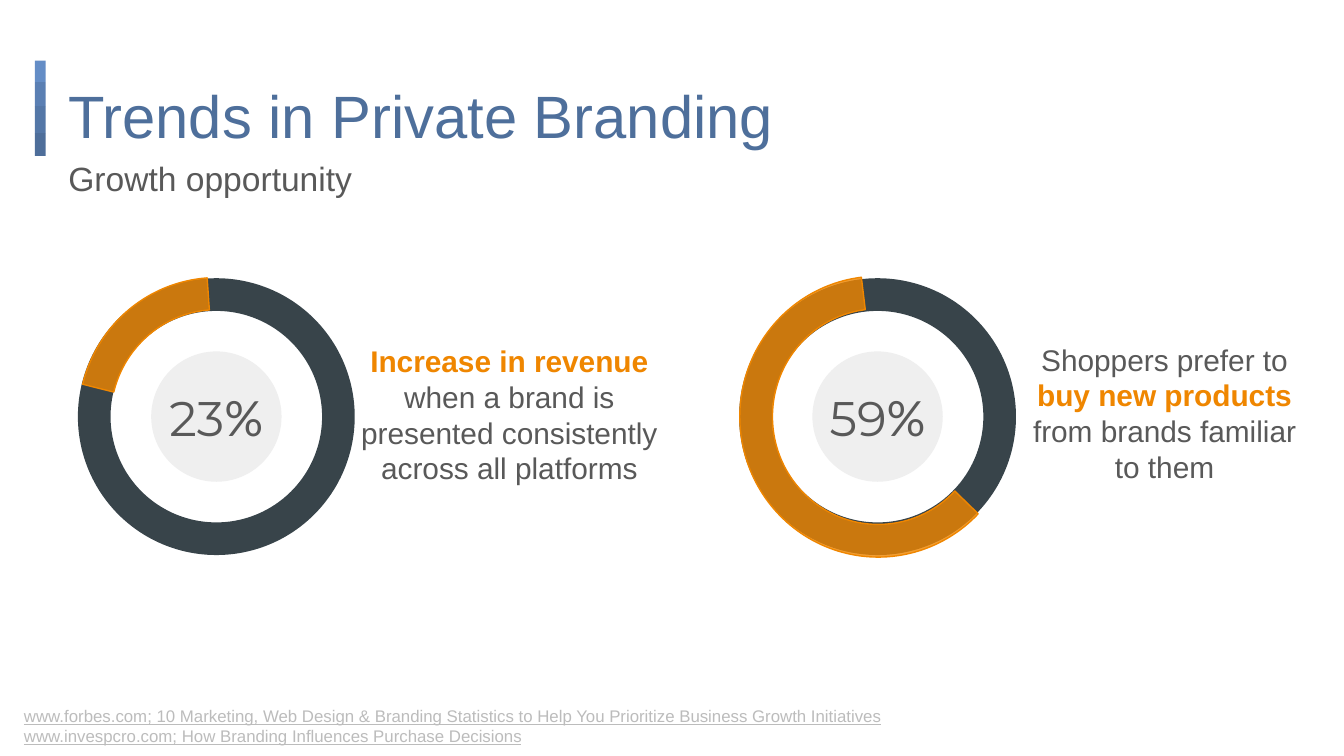
from dataclasses import dataclass

from lxml import etree
from pptx import Presentation
from pptx import util as u
from pptx.dml.color import RGBColor
from pptx.enum import shapes, text
from pptx.oxml import ns


@dataclass(frozen=True)
class Theme:
    title: str = "4E6F9B"
    body: str = "595959"
    accent: str = "EF8600"
    ring: str = "38444A"
    disc: str = "EFEFEF"
    source: str = "BCBCBC"
    bars: tuple = ("648DC6", "5A7FB3", "5477A7", "4E6E9A")
    font: str = "Arial"
    digits: str = "Montserrat"
    symbol: str = "Lato"
    big: int = 32
    figure: int = 26
    sub: int = 18
    label: int = 16
    small: int = 9


T = Theme()
KIND = shapes.MSO_SHAPE


def paint(fill, color):
    fill.solid()
    fill.fore_color.rgb = RGBColor.from_string(color)


def add_text(slide, box, paras, size, color=T.body, font=T.font, inset=(0.1, 0.1),
             align=None, anchor=text.MSO_ANCHOR.TOP, line=None, after=None,
             under=None, grow=False):
    shape = slide.shapes.add_textbox(*map(u.Inches, box))
    frame = shape.text_frame
    frame.word_wrap = True
    frame.auto_size = (text.MSO_AUTO_SIZE.SHAPE_TO_FIT_TEXT if grow
                       else text.MSO_AUTO_SIZE.NONE)
    frame.vertical_anchor = anchor
    frame.margin_left = frame.margin_right = u.Inches(inset[0])
    frame.margin_top = frame.margin_bottom = u.Inches(inset[1])
    for i, runs in enumerate(paras):
        para = frame.add_paragraph() if i else frame.paragraphs[0]
        para.alignment = align
        para.line_spacing = line
        if after is not None:
            para.space_after = u.Pt(after)
        for words, style in runs:
            run = para.add_run()
            run.text = words
            run.font.size = u.Pt(size)
            run.font.name = style.get("font", font)
            run.font.bold = style.get("bold")
            run.font.underline = under
            run.font.color.rgb = RGBColor.from_string(style.get("color", color))


def add_form(slide, kind, box, color, turn=0, adjust=(), alpha=None, edge=None):
    shape = slide.shapes.add_shape(kind, *map(u.Inches, box))
    shape.shadow.inherit = False
    shape.rotation = turn
    for i, value in enumerate(adjust):
        shape.adjustments[i] = value
    paint(shape.fill, color)
    if alpha is not None:
        tint = shape.fill._xPr.find(".//" + ns.qn("a:srgbClr"))
        etree.SubElement(tint, ns.qn("a:alpha")).set("val", str(alpha * 1000))
    if edge:
        paint(shape.line.fill, edge)
        shape.line.width = u.Pt(0.75)
    else:
        shape.line.fill.background()


def add_head(slide, left, top, width):
    y = top - 0.04
    for color, height in zip(T.bars, (0.16, 0.18, 0.2, 0.17)):
        mid = y + height / 2
        box = (left - 0.11 - height / 2, mid - 0.04, height, 0.08)
        add_form(slide, KIND.RECTANGLE, box, color, 270)
        y += height
    add_text(slide, (left, top, width, 0.63),
             [[("Trends in Private Branding", {})]], T.big, color=T.title)
    add_text(slide, (left, top + 0.54, width, 0.43),
             [[("Growth opportunity", {})]], T.sub, line=1.15, after=16)


def add_gauge(slide, left, top, size, number, arc, drop, note, place, inset):
    disc = 0.97
    gap = (size - disc) / 2
    add_form(slide, KIND.OVAL, (left + gap, top + gap, disc, disc), T.disc)
    add_form(slide, KIND.DONUT, (left, top, size, size), T.ring, 270, (0.118,))
    start, end, thick = arc
    unit = 0.6
    add_form(slide, KIND.BLOCK_ARC, (left - 0.01, top + drop, size + 0.03, size),
             T.accent, 270, (start * unit, end * unit, thick), alpha=80, edge=T.accent)
    add_text(slide, (left, top + 0.85, size, 0.37),
             [[(number, {}), ("%", {"font": T.symbol})]], T.figure, font=T.digits,
             align=text.PP_ALIGN.CENTER, anchor=text.MSO_ANCHOR.MIDDLE)
    x, y, width, height = place
    add_text(slide, (left + x, top + y, width, height), [note], T.label,
             inset=inset, align=text.PP_ALIGN.CENTER)


def add_source(slide, box):
    lines = (
        "www.forbes.com; 10 Marketing, Web Design & Branding Statistics to Help You "
        "Prioritize Business Growth Initiatives",
        "www.invespcro.com; How Branding Influences Purchase Decisions",
    )
    add_text(slide, box, [[(words, {})] for words in lines], T.small,
             color=T.source, inset=(0.1, 0.05), under=True, grow=True)


def main():
    deck = Presentation()
    deck.slide_width = u.Inches(10)
    deck.slide_height = deck.slide_width * 9 // 16
    slide = deck.slides.add_slide(deck.slide_layouts[6])
    strong = {"color": T.accent, "bold": True}
    add_head(slide, 0.41, 0.49, 9.25)
    add_gauge(slide, 0.58, 2.07, 2.06, "23", (284.11, 355.99, 0.116), 0.01,
              [("Increase in revenue ", strong),
               ("when a brand is presented consistently across all platforms", {})],
              (2.05, 0.48, 2.32, 1.17), (0, 0))
    add_gauge(slide, 5.5, 2.07, 2.06, "59", (134.17, 353.11, 0.118), 0,
              [("Shoppers prefer to ", {}), ("buy new products ", strong),
               ("from brands familiar to them", {})],
              (2.04, 0.42, 2.25, 1.21), (0.1, 0.05))
    add_source(slide, (0.08, 5.2, 6.62, 0.4))
    deck.save("out.pptx")


if __name__ == "__main__":
    main()
